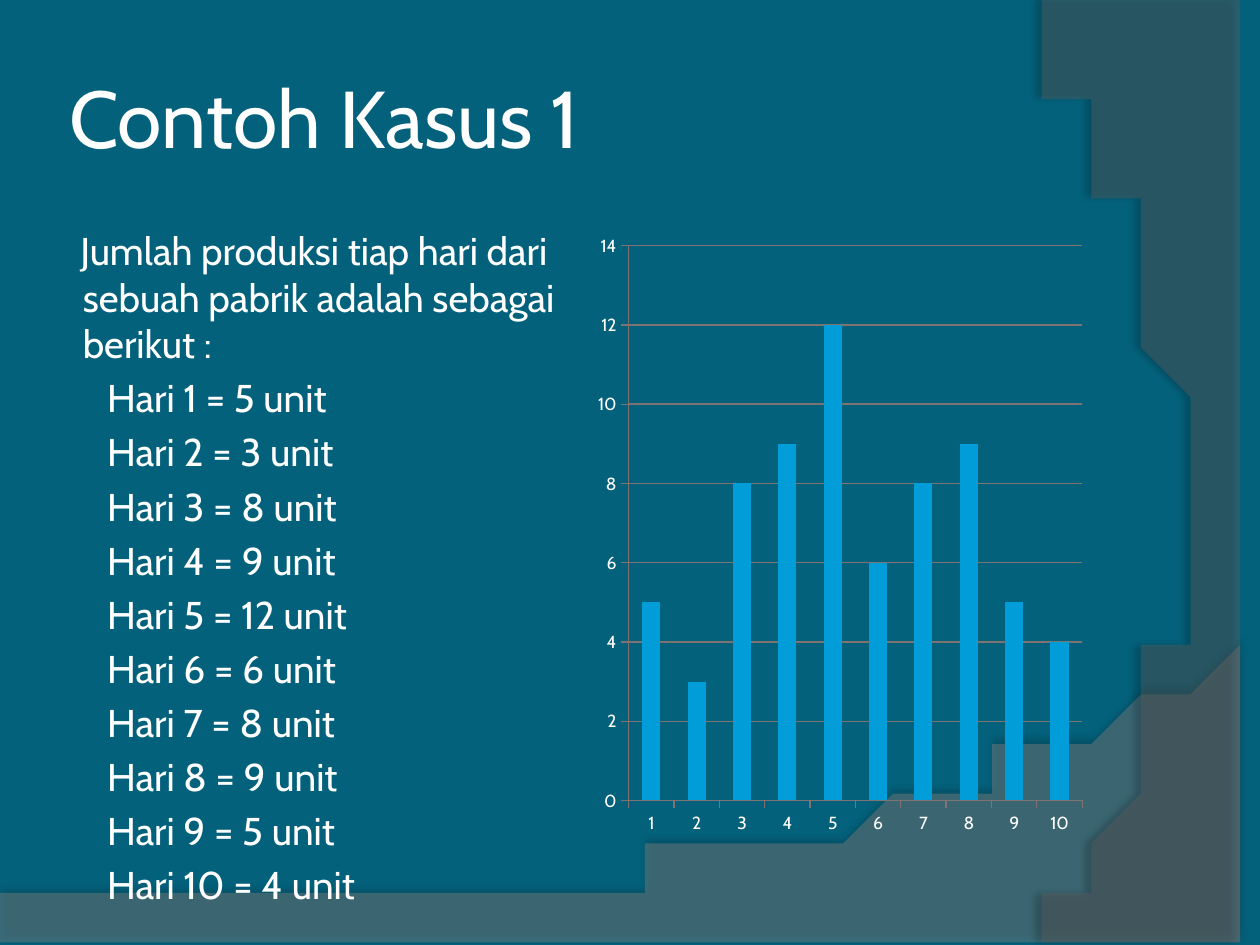
from lxml import etree
from pptx import Presentation, util as u
from pptx.chart.data import CategoryChartData
from pptx.dml.color import RGBColor
from pptx.enum import chart as chart_enum, text
from pptx.oxml import ns, parse_xml

TEAL = RGBColor(0x04, 0x61, 0x7B)
WHITE = RGBColor(0xFF, 0xFF, 0xFF)
BLUE = RGBColor(0x00, 0x9D, 0xD9)
GRID = RGBColor(0x7F, 0x72, 0x72)
BLACK = RGBColor(0, 0, 0)
FONT = "Cabin"

TITLE = "Contoh Kasus 1"
INTRO = "Jumlah produksi tiap hari dari sebuah pabrik adalah sebagai berikut :"
UNITS = [5, 3, 8, 9, 12, 6, 8, 9, 5, 4]

BOTTOM_WAVE = {
    "corners": [(0, 17.91), (0, 19.08), (25.4, 19.08)],
    "curve": [(25.4, 13.21), (14.2, 18.52), (9.93, 18.26), (0, 17.91)],
    "fill": RGBColor(0x7F, 0x7F, 0x7F), "alpha": 45,
    "shadow_alpha": 35, "distance": 3.5, "direction": 270,
}
RIGHT_WAVE = {
    "corners": [(25.4, 0.05), (25.4, 19.05)],
    "curve": [(20.85, 19.05), (23.75, 15.72), (25.86, 7.62), (20.32, 0)],
    "fill": RGBColor(0x5E, 0x5E, 0x5E), "alpha": 40,
    "shadow_alpha": 45, "distance": 4, "direction": 180,
}


def bezier(points, steps=60):
    for step in range(steps + 1):
        t = step / steps
        weights = ((1 - t) ** 3, 3 * t * (1 - t) ** 2, 3 * t * t * (1 - t), t ** 3)
        yield tuple(sum(w * p[axis] for w, p in zip(weights, points)) for axis in (0, 1))


def add_wave(slide, wave):
    points = wave["corners"] + list(bezier(wave["curve"]))
    builder = slide.shapes.build_freeform(*points[0], scale=u.Cm(1))
    builder.add_line_segments(points[1:], close=True)
    shape = builder.convert_to_shape()
    shape.fill.solid()
    shape.fill.fore_color.rgb = wave["fill"]
    shape.line.fill.background()
    shape.shadow.inherit = False
    properties = shape.element.spPr
    color = properties.find(ns.qn("a:solidFill"))[0]
    etree.SubElement(color, ns.qn("a:alpha"), val=str(wave["alpha"] * 1000))
    shadow = etree.SubElement(
        properties.find(ns.qn("a:effectLst")), ns.qn("a:outerShdw"),
        blurRad=str(u.Pt(4)), dist=str(u.Pt(wave["distance"])),
        dir=str(wave["direction"] * 60000), algn="ctr", rotWithShape="0")
    shadow_color = etree.SubElement(shadow, ns.qn("a:srgbClr"), val=str(BLACK))
    etree.SubElement(shadow_color, ns.qn("a:alpha"), val=str(wave["shadow_alpha"] * 1000))


def add_text(slide, box, lines, size, anchor):
    frame = slide.shapes.add_textbox(*map(u.Cm, box)).text_frame
    frame.word_wrap = True
    frame.vertical_anchor = anchor
    frame.margin_top = frame.margin_bottom = u.Cm(0.13)
    frame.text = "\n".join(lines)
    for paragraph in frame.paragraphs:
        for run in paragraph.runs:
            run.font.name = FONT
            run.font.size = u.Pt(size)
            run.font.color.rgb = WHITE
    return frame


def add_units_chart(slide, box):
    data = CategoryChartData()
    data.categories = [str(day) for day in range(1, len(UNITS) + 1)]
    data.add_series("Series 1", UNITS)
    chart = slide.shapes.add_chart(
        chart_enum.XL_CHART_TYPE.COLUMN_STACKED, *map(u.Cm, box), data).chart
    chart.has_legend = False
    chart.has_title = False
    chart.font.name = FONT
    chart.font.size = u.Pt(10)
    chart.font.color.rgb = WHITE
    plot = chart.plots[0]
    plot.vary_by_categories = False
    plot.gap_width = 150
    plot.overlap = 100
    series = plot.series[0]
    series.invert_if_negative = False
    series.format.fill.solid()
    series.format.fill.fore_color.rgb = BLUE
    value_axis = chart.value_axis
    value_axis.minimum_scale = 0
    value_axis.maximum_scale = 14
    value_axis.major_unit = 2
    value_axis.has_major_gridlines = True
    for part in (value_axis, chart.category_axis, value_axis.major_gridlines):
        part.format.line.color.rgb = GRID
        part.format.line.width = u.Pt(0.75)
    for axis in (value_axis, chart.category_axis):
        axis.major_tick_mark = chart_enum.XL_TICK_MARK.OUTSIDE
    plot_area = chart.element.find(".//" + ns.qn("c:plotArea"))
    for old in plot_area.findall(ns.qn("c:layout")):
        plot_area.remove(old)
    position = "".join(f'<c:{tag} val="{value}"/>' for tag, value in (
        ("layoutTarget", "inner"), ("xMode", "edge"), ("yMode", "edge"),
        ("x", 0.08), ("y", 0.04), ("w", 0.9), ("h", 0.89)))
    plot_area.insert(0, parse_xml(
        f'<c:layout {ns.nsdecls("c")}><c:manualLayout>{position}</c:manualLayout></c:layout>'))


def main():
    presentation = Presentation()
    presentation.slide_width, presentation.slide_height = u.Cm(25.4), u.Cm(19.05)
    slide = presentation.slides.add_slide(presentation.slide_layouts[6])
    slide.background.fill.solid()
    slide.background.fill.fore_color.rgb = TEAL
    for wave in (BOTTOM_WAVE, RIGHT_WAVE):
        add_wave(slide, wave)

    title = add_text(slide, (1.27, 0.76, 20.75, 3.18), [TITLE], 46, text.MSO_ANCHOR.MIDDLE)
    title.margin_left = title.margin_right = u.Cm(0.13)

    days = [f"Hari {day} = {units} unit" for day, units in enumerate(UNITS, 1)]
    body = add_text(slide, (1.27, 4.45, 10.16, 12.57), [INTRO] + days, 22.1, text.MSO_ANCHOR.TOP)
    for index, paragraph in enumerate(body.paragraphs):
        margin, indent = (0.64, 0) if index else (0.15, -0.05)
        properties = paragraph._p.get_or_add_pPr()
        properties.set("marL", str(u.Cm(margin)))
        properties.set("indent", str(u.Cm(indent)))
        if index:
            paragraph.space_before = u.Pt(4.4)

    add_units_chart(slide, (11.86, 4.45, 10.16, 12.57))
    presentation.save("out.pptx")


if __name__ == "__main__":
    main()
